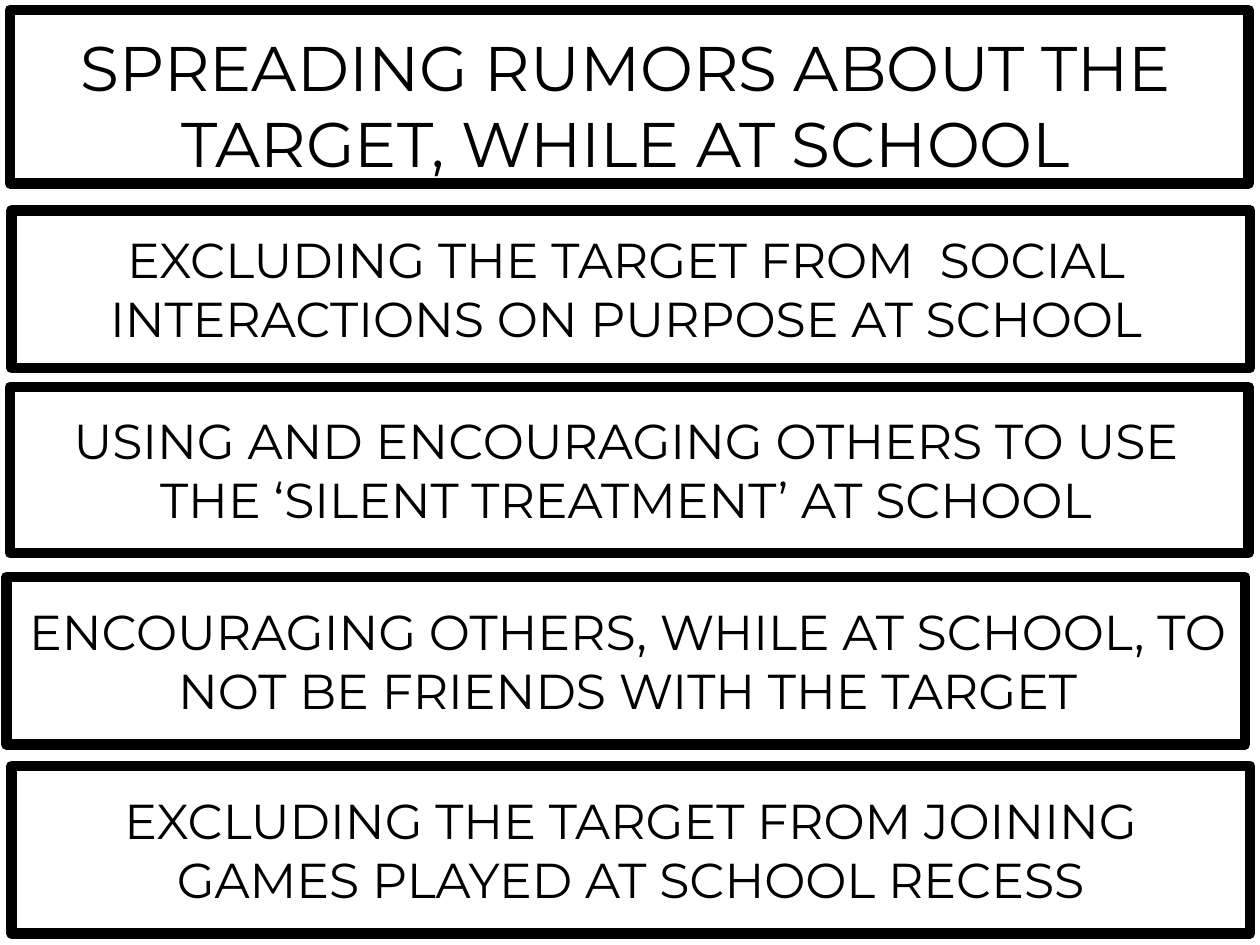
from dataclasses import dataclass

from pptx import Presentation
from pptx.dml.color import RGBColor
from pptx.enum.shapes import MSO_SHAPE
from pptx.enum.text import MSO_AUTO_SIZE, PP_ALIGN
from pptx.util import Cm, Pt


@dataclass(frozen=True)
class Theme:
    ink: RGBColor = RGBColor(0, 0, 0)
    paper: RGBColor = RGBColor(255, 255, 255)
    font: str = "Montserrat"
    lead_size: Pt = Pt(36)
    size: Pt = Pt(28)
    border: Pt = Pt(6)


theme = Theme()
FRAME_WIDTH = 24.97

# Frame (left, top, height), wording (left, top, width, height), type size, text; in cm
behaviors = [
    ((0.2, 0.2, 3.5), (0.23, 0.46, 24.77, 3.33), theme.lead_size,
     "SPREADING RUMORS ABOUT THE TARGET, WHILE AT SCHOOL"),
    ((0.23, 4.24, 3.18), (0.23, 4.5, 24.77, 2.64), theme.size,
     "EXCLUDING THE TARGET FROM  SOCIAL INTERACTIONS ON PURPOSE AT SCHOOL"),
    ((0.2, 7.8, 3.35), (0.23, 8.15, 24.77, 2.64), theme.size,
     "USING AND ENCOURAGING OTHERS TO USE THE ‘SILENT TREATMENT’ AT SCHOOL"),
    ((0.13, 11.63, 3.38), (0.1, 12.01, 25.1, 2.64), theme.size,
     "ENCOURAGING OTHERS, WHILE AT SCHOOL, TO NOT BE FRIENDS WITH THE TARGET"),
    ((0.23, 15.44, 3.38), (0.43, 15.82, 24.56, 2.64), theme.size,
     "EXCLUDING THE TARGET FROM JOINING GAMES PLAYED AT SCHOOL RECESS"),
]

prs = Presentation()
prs.slide_width, prs.slide_height = Cm(25.4), Cm(19.05)
slide = prs.slides.add_slide(prs.slide_layouts[6])

for (left, top, height), wording_box, size, wording in behaviors:
    frame = slide.shapes.add_shape(
        MSO_SHAPE.RECTANGLE, Cm(left), Cm(top), Cm(FRAME_WIDTH), Cm(height))
    frame.shadow.inherit = False
    frame.fill.solid()
    frame.fill.fore_color.rgb = theme.paper
    frame.line.color.rgb = theme.ink
    frame.line.width = theme.border

    behavior = slide.shapes.add_textbox(*map(Cm, wording_box)).text_frame
    behavior.word_wrap = True
    behavior.auto_size = MSO_AUTO_SIZE.SHAPE_TO_FIT_TEXT
    paragraph = behavior.paragraphs[0]
    paragraph.text = wording
    paragraph.alignment = PP_ALIGN.CENTER
    paragraph.font.name = theme.font
    paragraph.font.size = size
    paragraph.font.color.rgb = theme.ink

prs.save("out.pptx")
